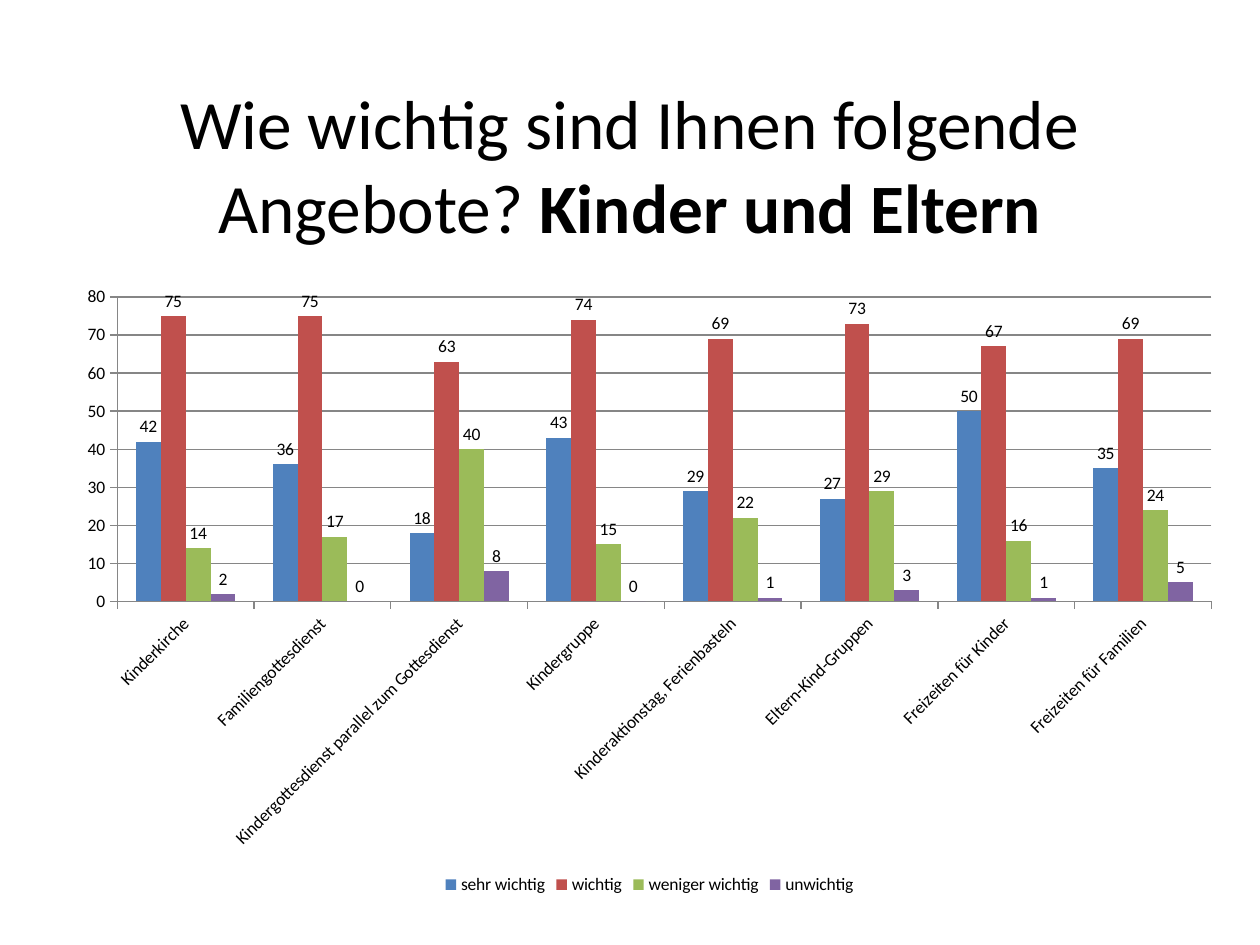
from pptx import Presentation
from pptx.chart.data import CategoryChartData as ChartData
from pptx.dml.color import RGBColor as RGB
from pptx.enum.chart import (
    XL_CHART_TYPE as ChartType,
    XL_LABEL_POSITION as LabelPosition,
    XL_LEGEND_POSITION as LegendPosition,
    XL_TICK_MARK as TickMark,
)
from pptx.enum.text import MSO_ANCHOR as Anchor, PP_ALIGN as Align
from pptx.util import Inches, Pt

COLORS = {
    "text": "000000",
    "axis": "868686",
    "sehr wichtig": "4F81BD",
    "wichtig": "C0504D",
    "weniger wichtig": "9BBB59",
    "unwichtig": "8064A2",
}

OFFERS = [
    "Kinderkirche",
    "Familiengottesdienst",
    "Kindergottesdienst parallel zum Gottesdienst",
    "Kindergruppe",
    "Kinderaktionstag, Ferienbasteln",
    "Eltern-Kind-Gruppen",
    "Freizeiten für Kinder",
    "Freizeiten für Familien",
]

RATINGS = {
    "sehr wichtig": (42, 36, 18, 43, 29, 27, 50, 35),
    "wichtig": (75, 75, 63, 74, 69, 73, 67, 69),
    "weniger wichtig": (14, 17, 40, 15, 22, 29, 16, 24),
    "unwichtig": (2, 0, 8, 0, 1, 3, 1, 5),
}


def style_font(font, size, bold=False):
    font.name = "Calibri"
    font.size = Pt(size)
    font.bold = bold
    font.color.rgb = RGB.from_string(COLORS["text"])


def add_text(paragraph, text, size=39.6, bold=False):
    run = paragraph.add_run()
    run.text = text
    style_font(run.font, size, bold)


class SurveySlide:
    def __init__(self, deck):
        self.slide = deck.slides.add_slide(deck.slide_layouts[6])
        self.axis_color = RGB.from_string(COLORS["axis"])

    def title(self, question, topic, left, top, width, height):
        frame = self.slide.shapes.add_textbox(left, top, width, height).text_frame
        frame.word_wrap = True
        frame.vertical_anchor = Anchor.MIDDLE
        frame.margin_top = frame.margin_bottom = 0
        heading = frame.paragraphs[0]
        heading.alignment = Align.CENTER
        add_text(heading, question)
        add_text(heading, topic, bold=True)

    def column_chart(self, offers, ratings, left, top, width, height):
        survey = ChartData(number_format="General")
        survey.categories = offers
        for rating, counts in ratings.items():
            survey.add_series(rating, counts)
        chart = self.slide.shapes.add_chart(
            ChartType.COLUMN_CLUSTERED, left, top, width, height, survey
        ).chart
        style_font(chart.font, 10)
        chart.has_title = False
        chart.has_legend = True
        chart.legend.position = LegendPosition.BOTTOM
        chart.legend.include_in_layout = False
        self.columns(chart.plots[0])
        self.axes(chart)

    def columns(self, plot):
        plot.gap_width = 150
        plot.overlap = 0
        plot.vary_by_categories = False
        for series in plot.series:
            series.format.fill.solid()
            series.format.fill.fore_color.rgb = RGB.from_string(COLORS[series.name])
            series.invert_if_negative = False
            series.data_labels.show_value = True
            series.data_labels.position = LabelPosition.OUTSIDE_END

    def axes(self, chart):
        offer_axis, count_axis = chart.category_axis, chart.value_axis
        for axis in (offer_axis, count_axis):
            axis.major_tick_mark = TickMark.OUTSIDE
            axis.minor_tick_mark = TickMark.NONE
            style_font(axis.tick_labels.font, 10)
            self.line(axis.format.line)
        offer_axis._element.txPr.bodyPr.set("rot", "-2700000")
        count_axis.minimum_scale = 0
        count_axis.maximum_scale = 80
        count_axis.major_unit = 10
        count_axis.has_major_gridlines = True
        self.line(count_axis.major_gridlines.format.line)

    def line(self, line):
        line.color.rgb = self.axis_color
        line.width = Pt(0.75)


def main():
    deck = Presentation()
    deck.slide_width = Inches(10)
    deck.slide_height = Inches(7.5)
    survey = SurveySlide(deck)
    survey.title(
        "Wie wichtig sind Ihnen folgende Angebote? ", "Kinder und Eltern",
        Inches(0.5), Inches(0.63), Inches(9), Inches(1.34),
    )
    survey.column_chart(
        OFFERS, RATINGS,
        Inches(0.51), Inches(2.18), Inches(9.29), Inches(4.96),
    )
    deck.save("out.pptx")


if __name__ == "__main__":
    main()
